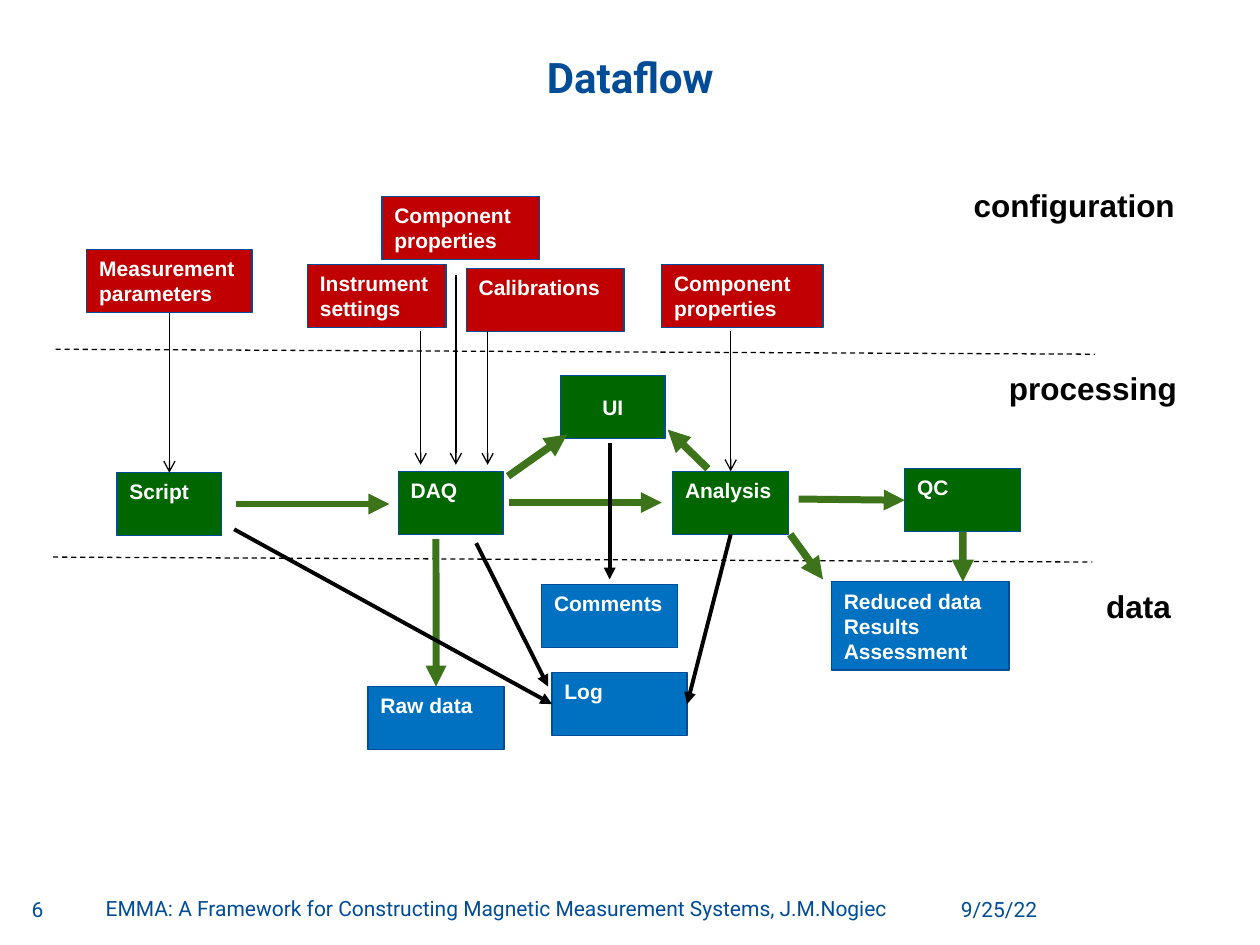
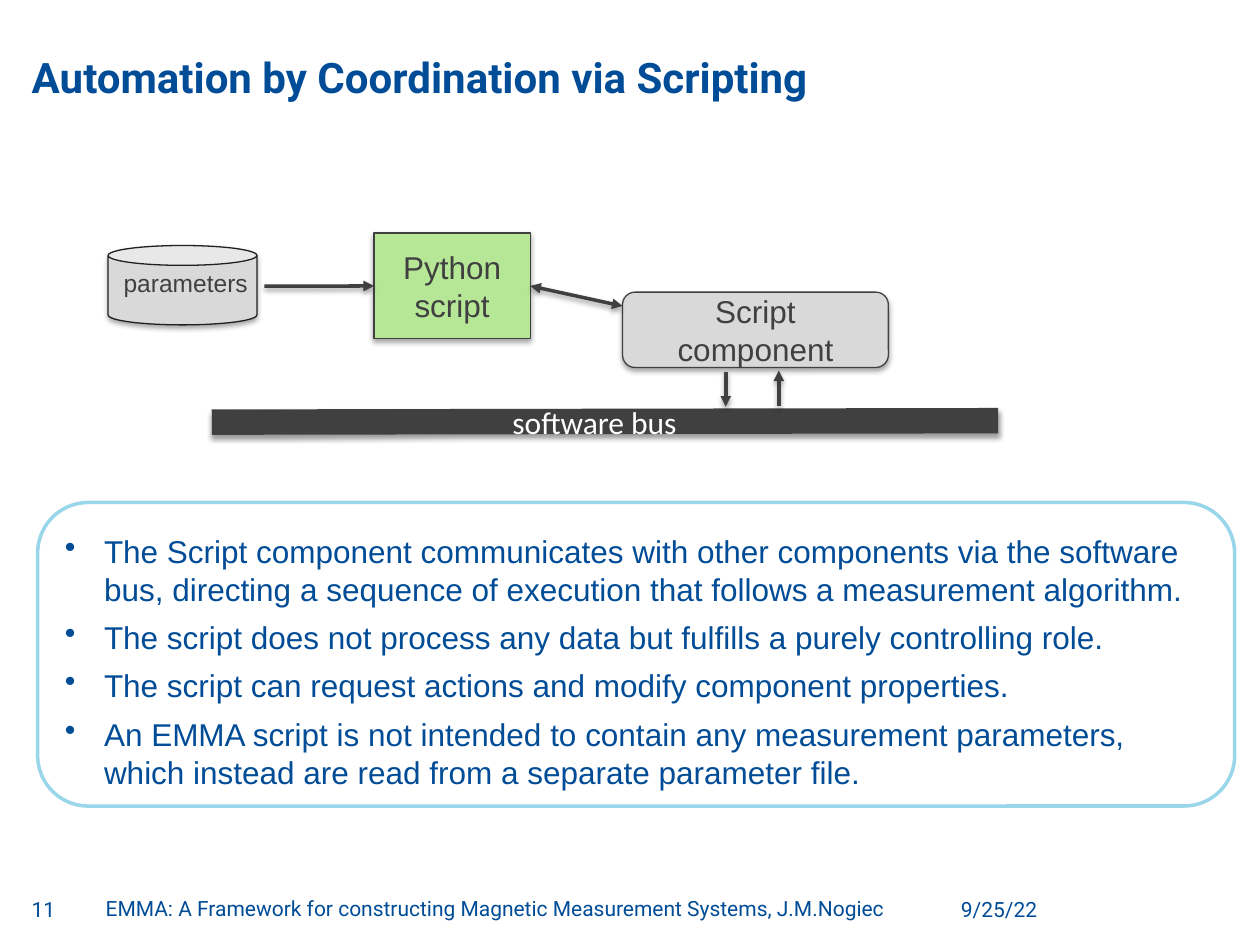
from dataclasses import dataclass
from typing import NamedTuple

from lxml.etree import SubElement
from pptx import Presentation
from pptx.dml.color import RGBColor
from pptx.enum.dml import MSO_LINE
from pptx.enum.shapes import MSO_CONNECTOR, MSO_SHAPE
from pptx.enum.text import MSO_ANCHOR, MSO_AUTO_SIZE, PP_ALIGN
from pptx.oxml.ns import qn
from pptx.util import Cm, Pt

TOP, LEFT, BOTTOM, RIGHT = range(4)


@dataclass(frozen=True)
class Theme:
    navy: str = "004C97"
    white: str = "FFFFFF"
    black: str = "000000"
    configuration: str = "C00000"
    processing: str = "006600"
    data: str = "0070C0"
    flow: str = "3D741B"
    charcoal: str = "404040"
    outline: str = "202020"
    gray: str = "D9D9D9"
    lime: str = "B6E797"
    sky: str = "99D6EA"
    heading_font: str = "Roboto"
    body_font: str = "Arial"
    bus_font: str = "Calibri"
    title_size: float = 24
    body_size: float = 18
    store_size: float = 14
    small_size: float = 12


class Text(NamedTuple):
    size: float
    color: str
    font: str = Theme.body_font
    bold: bool = False
    align: PP_ALIGN = PP_ALIGN.LEFT
    anchor: MSO_ANCHOR = MSO_ANCHOR.TOP


class Stroke(NamedTuple):
    color: str
    width: float
    head: str = ""
    tail: str = ""
    dashed: bool = False
    shadow: bool = False


class Side(NamedTuple):
    """The middle of one side of a box, for joining a connector."""
    box: object
    site: int


class SlideBuilder:
    def __init__(self, theme):
        self.theme = theme
        self.deck = Presentation()
        self.deck.slide_width, self.deck.slide_height = Cm(25.4), Cm(19.05)
        self.page = None

    def new_page(self, title, align, number, footer):
        theme = self.theme
        self.page = self.deck.slides.add_slide(self.deck.slide_layouts[6])
        heading = Text(theme.title_size, theme.navy, theme.heading_font, True, align, MSO_ANCHOR.BOTTOM)
        small = Text(theme.small_size, theme.navy, theme.heading_font)
        self.text((0.64, 0.28, 24.13, 1.78), title, heading)
        self.text((17.91, 18.08, 3, 0.66), "9/25/22", small._replace(align=PP_ALIGN.RIGHT))
        self.text((0.64, 18.08, 1.24, 0.66), number, small)
        self.text((2.13, 18.06, 16.76, 0.66), footer, small)

    def text(self, area, words, style):
        """Text box without margins, as used for titles and footers."""
        box = self.page.shapes.add_textbox(*map(Cm, area))
        box.text_frame.word_wrap = True
        self.margins(box, 0, 0, 0, 0)
        self.fill_text(box, [words], style)

    def label(self, area, words, style):
        """Text box that grows with its single line."""
        box = self.page.shapes.add_textbox(*map(Cm, area))
        box.text_frame.word_wrap = False
        box.text_frame.auto_size = MSO_AUTO_SIZE.SHAPE_TO_FIT_TEXT
        self.fill_text(box, [words], style)

    def shape(self, kind, area, fill, line, lines, style, width=0.75, shadow=False, bullets=False):
        box = self.page.shapes.add_shape(kind, *map(Cm, area))
        box.shadow.inherit = False
        box.fill.solid()
        box.fill.fore_color.rgb = RGBColor.from_string(fill)
        box.line.color.rgb = RGBColor.from_string(line)
        box.line.width = Pt(width)
        if shadow:
            self.cast_shadow(box._element.spPr.find(qn("a:effectLst")), 35)
        self.fill_text(box, lines, style, bullets)
        return box

    def connect(self, start, end, stroke):
        """Draw a line; each end is a point in cm or a Side."""
        points = [(0, 0) if isinstance(place, Side) else place for place in (start, end)]
        line = self.page.shapes.add_connector(
            MSO_CONNECTOR.STRAIGHT, *(Cm(value) for point in points for value in point))
        if isinstance(start, Side):
            line.begin_connect(*start)
        if isinstance(end, Side):
            line.end_connect(*end)
        line.line.color.rgb = RGBColor.from_string(stroke.color)
        line.line.width = Pt(stroke.width)
        if stroke.dashed:
            line.line.dash_style = MSO_LINE.DASH
        properties = line._element.spPr
        for tag, kind in (("a:headEnd", stroke.head), ("a:tailEnd", stroke.tail)):
            if kind:
                SubElement(properties.find(qn("a:ln")), qn(tag), type=kind)
        effects = SubElement(properties, qn("a:effectLst"))
        if stroke.shadow:
            self.cast_shadow(effects, 38)

    def fill_text(self, box, lines, style, bullets=False):
        frame = box.text_frame
        frame.vertical_anchor = style.anchor
        for index, words in enumerate(lines):
            para = frame.paragraphs[0] if index == 0 else frame.add_paragraph()
            para.add_run().text = words
            para.alignment = style.align
            if bullets:
                properties = para._p.get_or_add_pPr()
                properties.set("marL", str(Cm(0.79)))
                properties.set("indent", str(-Cm(0.79)))
                SubElement(properties, qn("a:buChar"), char="•")
                if index:
                    para.space_before = Pt(6)
            para.font.size = Pt(style.size)
            para.font.name = style.font
            para.font.bold = style.bold
            para.font.color.rgb = RGBColor.from_string(style.color)

    @staticmethod
    def margins(box, left, top, right, bottom):
        frame = box.text_frame
        frame.margin_left, frame.margin_top = Cm(left), Cm(top)
        frame.margin_right, frame.margin_bottom = Cm(right), Cm(bottom)

    @staticmethod
    def cast_shadow(effects, opacity):
        shadow = SubElement(effects, qn("a:outerShdw"), blurRad=str(Pt(3.1)),
                            dist=str(Pt(1.7)), dir="5400000", rotWithShape="0")
        color = SubElement(shadow, qn("a:srgbClr"), val="000000")
        SubElement(color, qn("a:alpha"), val=str(opacity * 1000))


def build_dataflow(builder):
    theme = builder.theme
    builder.new_page("Dataflow", PP_ALIGN.CENTER, "6",
                     "EMMA: A Framework for Constructing Magnetic Measurement Systems, J.M.Nogiec")
    box_text = Text(theme.small_size, theme.white, bold=True)

    def block(fill, left, top, width, *lines, height=1.27, style=box_text):
        return builder.shape(MSO_SHAPE.RECTANGLE, (left, top, width, height),
                             fill, theme.navy, lines, style)

    # Configuration boxes
    measurement = block(theme.configuration, 1.75, 5.03, 3.33, "Measurement", "parameters")
    block(theme.configuration, 6.2, 5.33, 2.79, "Instrument", "settings")
    block(theme.configuration, 7.7, 3.96, 3.18, "Component", "properties")
    block(theme.configuration, 9.4, 5.41, 3.18, "Calibrations")
    block(theme.configuration, 13.34, 5.33, 3.25, "Component", "properties")

    # Processing boxes
    script = block(theme.processing, 2.36, 9.53, 2.11, "Script")
    block(theme.processing, 8.03, 9.5, 2.11, "DAQ")
    analysis = block(theme.processing, 13.56, 9.5, 2.34, "Analysis")
    quality = block(theme.processing, 18.24, 9.45, 2.34, "QC")
    block(theme.processing, 11.3, 7.57, 2.11, "UI",
          style=box_text._replace(align=PP_ALIGN.CENTER, anchor=MSO_ANCHOR.MIDDLE))

    # Data boxes
    raw_data = block(theme.data, 7.42, 13.84, 2.74, "Raw data")
    log = block(theme.data, 11.13, 13.56, 2.72, "Log")
    block(theme.data, 10.92, 11.79, 2.74, "Comments")
    block(theme.data, 16.76, 11.73, 3.58, "Reduced data", "Results", "Assessment", height=1.78)

    # Layer dividers and labels
    divider = Stroke(theme.black, 0.75, dashed=True)
    for left, top in ((1.12, 7.04), (1.07, 11.23)):
        builder.connect((left, top), (left + 20.95, top + 0.1), divider)
    layer_text = Text(theme.body_size, theme.black, bold=True)
    for left, top, width, name in ((19.38, 3.63, 4.6, "configuration"),
                                   (20.09, 7.32, 3.94, "processing"),
                                   (22.05, 11.71, 1.83, "data")):
        builder.label((left, top, width, 1.02), name, layer_text)

    # Arrows: settings in, data through, messages out
    setting = Stroke(theme.black, 0.75, tail="arrow")
    flow = Stroke(theme.flow, 4, tail="triangle")
    branch = flow._replace(width=4.25)
    message = Stroke(theme.black, 2.25, tail="triangle")
    for start, end, stroke in (
        (Side(measurement, BOTTOM), Side(script, TOP), setting),
        ((8.48, 6.68), (8.48, 9.37), setting),
        ((9.19, 5.54), (9.19, 9.37), setting),
        ((9.83, 6.68), (9.83, 9.37), setting),
        ((14.73, 6.68), Side(analysis, TOP), setting),
        ((4.75, 10.16), (7.85, 10.16), flow),
        ((10.26, 10.13), (13.34, 10.13), flow),
        ((16.1, 10.06), Side(quality, LEFT), flow),
        ((8.79, 10.87), Side(raw_data, TOP), flow),
        ((10.24, 9.6), (11.43, 8.76), branch),
        ((14.27, 9.45), (13.46, 8.66), branch),
        ((15.93, 10.77), (16.59, 11.68), branch),
        (Side(quality, BOTTOM), (19.41, 11.73), branch),
        ((12.29, 8.94), (12.29, 11.68), message),
        (Side(analysis, BOTTOM), Side(log, RIGHT), message),
        ((4.72, 10.67), Side(log, LEFT), message),
        ((9.6, 10.95), (11.05, 13.84), message),
    ):
        builder.connect(start, end, stroke)


def build_scripting(builder):
    theme = builder.theme
    builder.new_page("Automation by Coordination via Scripting", PP_ALIGN.LEFT, "11",
                     "EMMA: A Framework for constructing Magnetic Measurement Systems, J.M.Nogiec")
    node_text = Text(theme.body_size, theme.charcoal, align=PP_ALIGN.CENTER, anchor=MSO_ANCHOR.MIDDLE)

    # Parameter store, script and component
    store = builder.shape(MSO_SHAPE.CAN, (2.18, 4.95, 3, 1.6), theme.gray, theme.outline,
                          ["parameters"], node_text._replace(size=theme.store_size), shadow=True)
    builder.margins(store, 0.13, 0, 0, 0.3)
    script = builder.shape(MSO_SHAPE.RECTANGLE, (7.54, 4.7, 3.15, 2.13), theme.lime,
                           theme.charcoal, ["Python", "script"], node_text, shadow=True)
    builder.shape(MSO_SHAPE.ROUNDED_RECTANGLE, (12.55, 5.89, 5.36, 1.52), theme.gray,
                  theme.charcoal, ["Script component"], node_text, shadow=True)

    # Software bus
    bus = Stroke(theme.charcoal, 14.5, shadow=True)
    builder.connect((4.27, 8.51), (20.12, 8.48), bus)
    builder.label((10.08, 8, 3.89, 1.02), "software bus",
                  Text(theme.body_size, theme.white, theme.bus_font))

    # Arrows
    call = Stroke(theme.charcoal, 2, tail="triangle", shadow=True)
    builder.connect((5.33, 5.77), Side(script, LEFT), call)
    builder.connect(Side(script, RIGHT), (12.55, 6.17), call._replace(head="triangle"))
    builder.connect((14.63, 7.49), (14.63, 8.2), call)
    builder.connect((15.7, 7.47), (15.7, 8.18), call._replace(head="triangle", tail=""))

    # Notes on the role of the script
    panel = builder.shape(
        MSO_SHAPE.ROUNDED_RECTANGLE, (0.76, 10.13, 24.13, 6.12), theme.white, theme.sky,
        ["The Script component communicates with other components via the software bus, "
         "directing a sequence of execution that follows a measurement algorithm.",
         "The script does not process any data but fulfills a purely controlling role.",
         "The script can request actions and modify component properties.",
         "An EMMA script is not intended to contain any measurement parameters, "
         "which instead are read from a separate parameter file."],
        Text(theme.body_size, theme.navy, anchor=MSO_ANCHOR.MIDDLE), width=2, bullets=True)
    builder.margins(panel, 0.25, 0.41, 0.25, 0.13)


def main():
    builder = SlideBuilder(Theme())
    build_dataflow(builder)
    build_scripting(builder)
    builder.deck.save("out.pptx")


if __name__ == "__main__":
    main()
